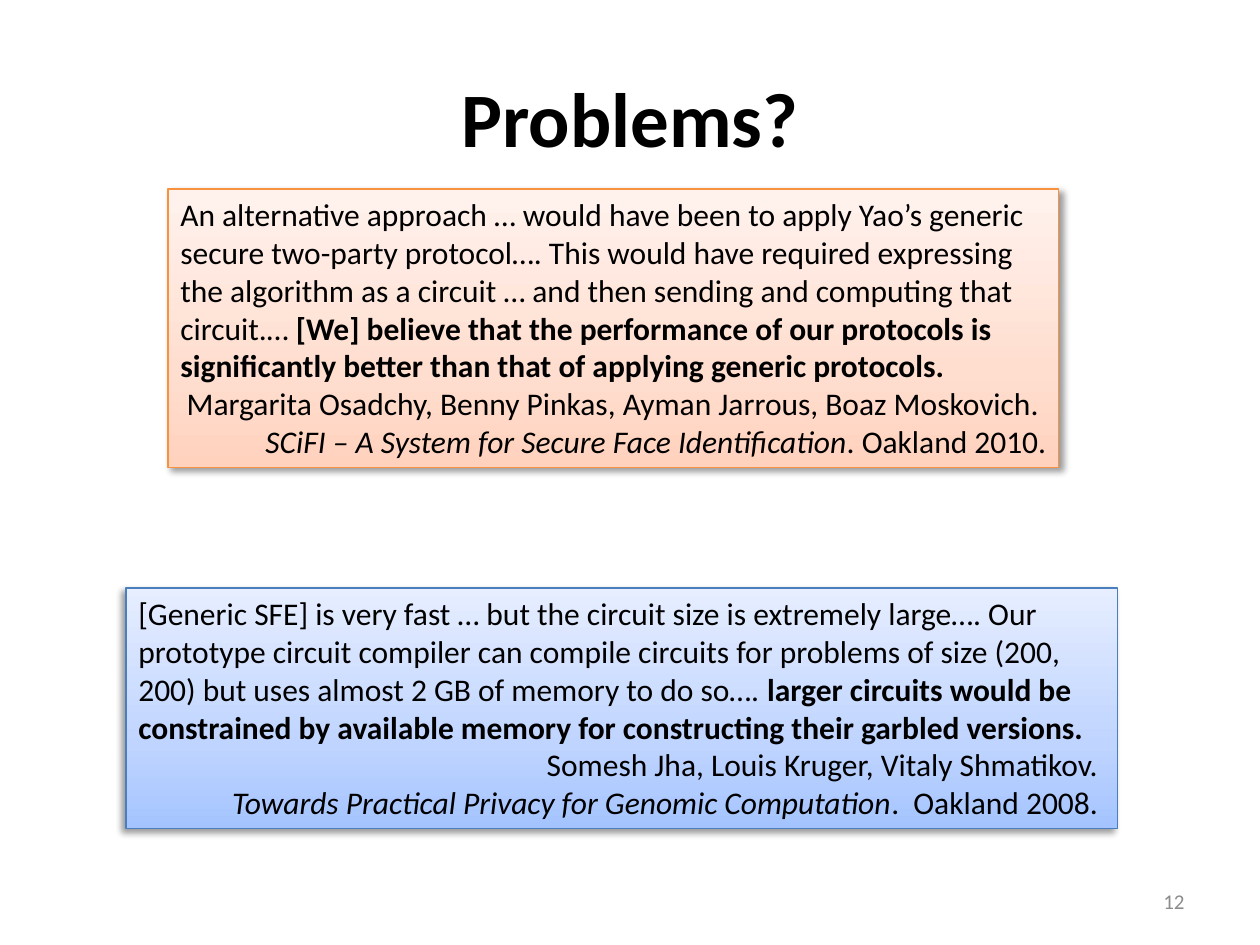
from pptx import Presentation
from pptx.dml.color import RGBColor
from pptx.enum.shapes import MSO_SHAPE
from pptx.enum.text import MSO_ANCHOR, MSO_AUTO_SIZE, PP_ALIGN
from pptx.oxml import parse_xml
from pptx.oxml.ns import nsdecls, qn
from pptx.util import Inches, Pt

WIDTH, HEIGHT = Inches(10), Inches(7.5)
TITLE_ONLY = 5
RECTANGLE = MSO_SHAPE.RECTANGLE
TOP, MIDDLE = MSO_ANCHOR.TOP, MSO_ANCHOR.MIDDLE
LEFT, CENTER, RIGHT = PP_ALIGN.LEFT, PP_ALIGN.CENTER, PP_ALIGN.RIGHT
GROW = MSO_AUTO_SIZE.SHAPE_TO_FIT_TEXT

ORANGE = {"stops": [(0, "FFD2BD"), (35, "FFDED0"), (100, "FFF2ED")],
          "outline": "F69240", "shadow_angle": 45}
BLUE = {"stops": [(0, "A4C4FF"), (35, "BFD4FF"), (100, "E6EEFF")],
        "outline": "4B7EBC", "shadow_angle": 135}

FACE_QUOTE = {
    "plain": "An alternative approach … would have been to apply Yao’s generic secure "
             "two-party protocol…. This would have required expressing the algorithm as a "
             "circuit … and then sending and computing that circuit.… ",
    "strong": "[We] believe that the performance of our protocols is significantly better "
              "than that of applying generic protocols.",
    "authors": "Margarita Osadchy, Benny Pinkas, Ayman Jarrous, Boaz Moskovich. ",
    "work": "SCiFI – A System for Secure Face Identification",
    "venue": ". Oakland 2010.",
}
GENOME_QUOTE = {
    "plain": "[Generic SFE] is very fast … but the circuit size is extremely large…. Our "
             "prototype circuit compiler can compile circuits for problems of size (200, 200) "
             "but uses almost 2 GB of memory to do so….",
    "strong": " larger circuits would be constrained by available memory for constructing "
              "their garbled versions.",
    "authors": "Somesh Jha, Louis Kruger, Vitaly Shmatikov. ",
    "work": "Towards Practical Privacy for Genomic Computation",
    "venue": ".  Oakland 2008. ",
}


def color(value):
    """Turn a hex string into a colour."""
    return RGBColor.from_string(value)


def share(left, top, width, height):
    """Turn percentages of the slide into a box of lengths."""
    return (int(WIDTH * left / 100), int(HEIGHT * top / 100),
            int(WIDTH * width / 100), int(HEIGHT * height / 100))


def place(shape, box):
    """Move and size a shape to a box."""
    shape.left, shape.top, shape.width, shape.height = box


def write(paragraph, text, size=18, ink="000000", bold=False, italic=False, align=LEFT):
    """Add one formatted run to a paragraph."""
    paragraph.alignment = align
    run = paragraph.add_run()
    run.text = text
    font = run.font
    font.name, font.size, font.bold, font.italic = "Calibri", Pt(size), bold, italic
    font.color.rgb = color(ink)


def paint(shape, stops, outline, shadow_angle):
    """Give a shape an upward gradient, a thin outline and a soft shadow."""
    shape.line.color.rgb = color(outline)
    shape.line.width = Pt(0.75)
    stop_list = "".join(
        f'<a:gs pos="{position * 1000}"><a:srgbClr val="{value}"/></a:gs>'
        for position, value in stops)
    gradient = parse_xml(
        f'<a:gradFill {nsdecls("a")} rotWithShape="1"><a:gsLst>{stop_list}</a:gsLst>'
        f'<a:lin ang="{270 * 60000}" scaled="0"/></a:gradFill>')
    effects = parse_xml(
        f'<a:effectLst {nsdecls("a")}><a:outerShdw blurRad="{Pt(4)}" dist="{Pt(3)}" '
        f'dir="{shadow_angle * 60000}" rotWithShape="0"><a:srgbClr val="000000">'
        '<a:alpha val="40000"/></a:srgbClr></a:outerShdw></a:effectLst>')
    properties = shape._element.spPr
    properties.find(qn("a:prstGeom")).addnext(gradient)
    properties.find(qn("a:ln")).addnext(effects)


def add_title(slide, box, text):
    """Place and fill the title placeholder."""
    title = slide.shapes.title
    place(title, box)
    title.text_frame.vertical_anchor = MIDDLE
    write(title.text_frame.paragraphs[0], text, size=44, bold=True, align=CENTER)


def add_page_number(slide, box, text):
    """Write the page number in its box."""
    frame = slide.shapes.add_textbox(*box).text_frame
    frame.word_wrap = True
    frame.vertical_anchor = MIDDLE
    write(frame.paragraphs[0], text, size=12, ink="8C8C8C", align=RIGHT)


def add_quote(slide, box, quote, theme):
    """Draw a quotation card with its authors and source."""
    card = slide.shapes.add_shape(RECTANGLE, *box)
    paint(card, **theme)
    frame = card.text_frame
    frame.word_wrap = True
    frame.auto_size = GROW
    frame.vertical_anchor = TOP
    body = frame.paragraphs[0]
    write(body, quote["plain"])
    write(body, quote["strong"], bold=True)
    write(frame.add_paragraph(), quote["authors"], align=RIGHT)
    source = frame.add_paragraph()
    write(source, quote["work"], italic=True, align=RIGHT)
    write(source, quote["venue"], align=RIGHT)


def main():
    """Build the slide and save it."""
    presentation = Presentation()
    presentation.slide_width, presentation.slide_height = WIDTH, HEIGHT
    slide = presentation.slides.add_slide(presentation.slide_layouts[TITLE_ONLY])
    add_title(slide, share(5, 4, 90, 16.67), "Problems?")
    add_page_number(slide, share(71.67, 92.67, 23.33, 5.33), "12")
    add_quote(slide, share(13.33, 20, 70.7, 29.47), FACE_QUOTE, ORANGE)
    add_quote(slide, share(10, 62.22, 78.7, 25.47), GENOME_QUOTE, BLUE)
    presentation.save("out.pptx")


if __name__ == "__main__":
    main()
